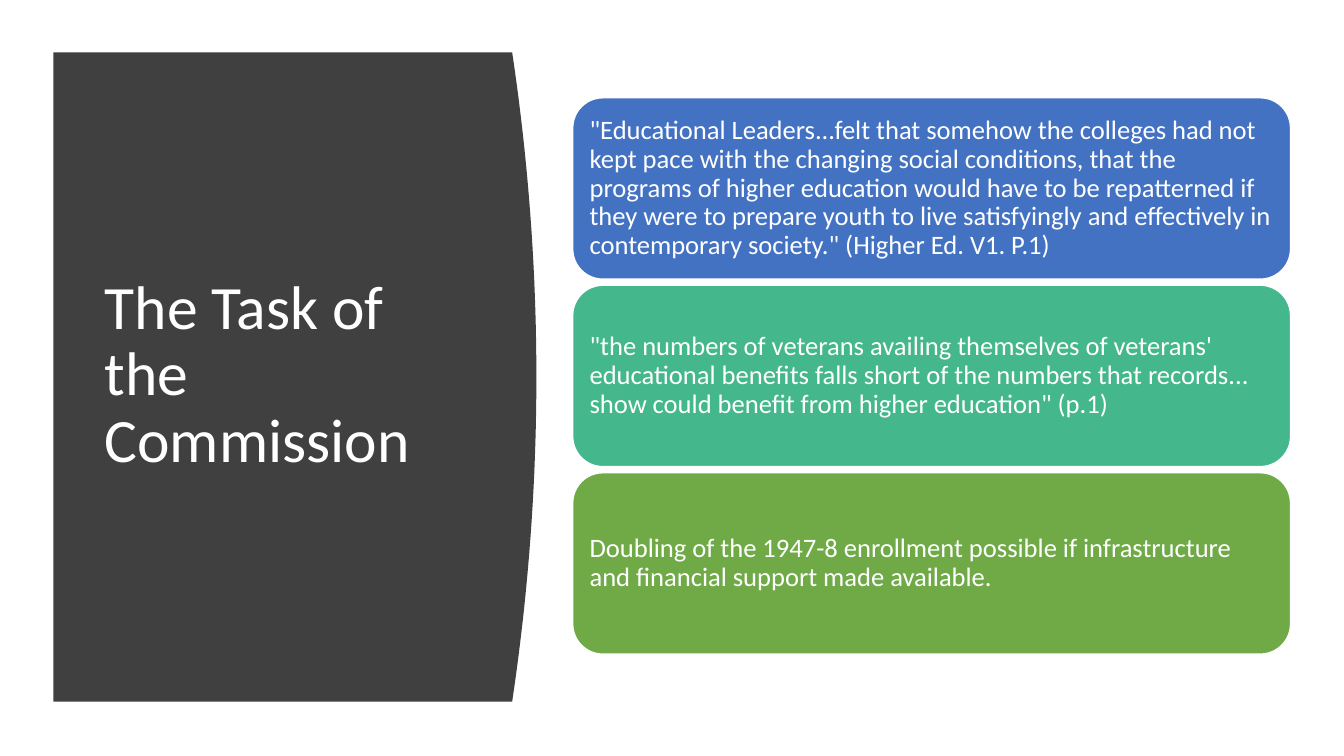
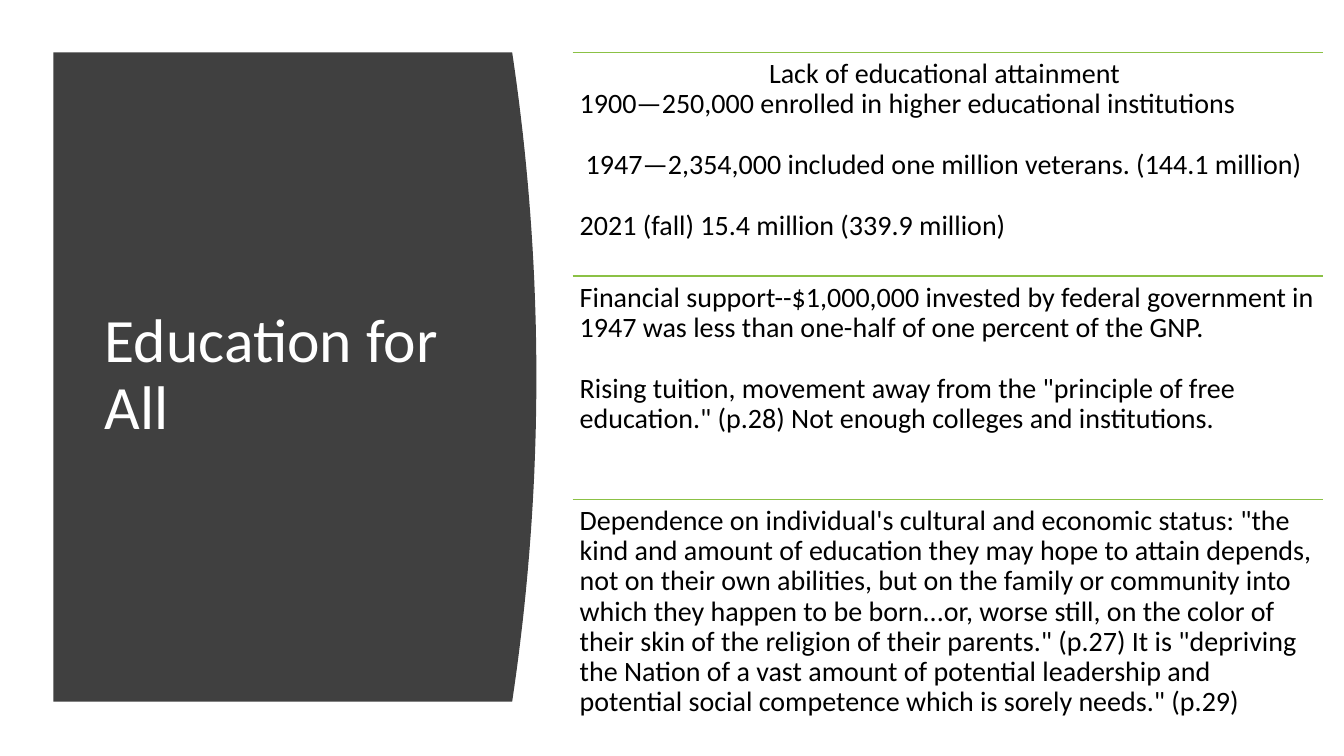
from lxml.etree import SubElement
from pptx import Presentation
from pptx.dml.color import RGBColor
from pptx.enum.shapes import MSO_CONNECTOR, MSO_SHAPE
from pptx.enum.text import MSO_ANCHOR, PP_ALIGN
from pptx.oxml.ns import qn
from pptx.util import Emu, Pt

EMU_PER_PX = 9144  # 100 px to the inch
SLIDE_WIDTH, SLIDE_HEIGHT = 1333, 750
FONT = "Calibri"
WHITE, BLACK, DARK, GREEN = "FFFFFF", "000000", "404040", "8BC145"

PANEL = {"left": 53, "top": 52, "width": 455, "height": 644, "bulge": 24}
PANEL_STEPS = 40
TITLE_BOX = (94, 111, 374, 524)
CONTENT_LEFT = 568

TASK_TITLE = "The Task of the Commission"
TASK_CARDS = [
    ("4372C3", '"Educational Leaders...felt that somehow the colleges had not kept pace with the '
     'changing social conditions, that the programs of higher education would have to be '
     'repatterned if they were to prepare youth to live satisfyingly and effectively in '
     'contemporary society." (Higher Ed. V1. P.1)'),
    ("44B78C", '"the numbers of veterans availing themselves of veterans\' educational benefits '
     'falls short of the numbers that records... show could benefit from higher education" (p.1)'),
    ("6FAA47", "Doubling of the 1947-8 enrollment possible if infrastructure and financial "
     "support made available."),
]
CARDS_TOP, CARD_WIDTH, CARD_HEIGHT, CARD_GAP = 97, 712, 180, 6

EDUCATION_TITLE = "Education for All"
# Each section is a list of (text, paragraph format).
LINE_GAP = 22
EDUCATION_SECTIONS = [
    [
        ("Lack of educational attainment ", {"align": PP_ALIGN.CENTER}),
        ("1900—250,000 enrolled in higher educational institutions", {}),
        ("1947—2,354,000 included one million veterans. (144.1 million)",
         {"space_before": LINE_GAP, "indent": 6}),
        ("2021 (fall) 15.4 million (339.9 million)", {"space_before": LINE_GAP}),
    ],
    [
        ("Financial support--$1,000,000 invested by federal government in 1947 was less than "
         "one-half of one percent of the GNP.", {}),
        ('Rising tuition, movement away from the "principle of free education." (p.28) '
         "Not enough colleges and institutions.", {"space_before": LINE_GAP}),
    ],
    [
        ("Dependence on individual's cultural and economic status: \"the kind and amount of "
         "education they may hope to attain depends, not on their own abilities, but on the "
         "family or community into which they happen to be born...or, worse still, on the color "
         'of their skin of the religion of their parents." (p.27) It is "depriving the Nation of '
         "a vast amount of potential leadership and potential social competence which is sorely "
         'needs." (p.29)', {}),
    ],
]
SECTIONS_TOP, SECTIONS_WIDTH, SECTIONS_HEIGHT = 52, 744, 665


def px(value):
    return Emu(round(value * EMU_PER_PX))


def rgb(hex_color):
    return RGBColor.from_string(hex_color)


def paint(shape, fill, line=None):
    shape.shadow.inherit = False
    shape.fill.solid()
    shape.fill.fore_color.rgb = rgb(fill)
    if line:
        shape.line.color.rgb = rgb(line)
        shape.line.width = Pt(1)
    else:
        shape.line.fill.background()


def set_frame(shape, anchor, inset_x, inset_y):
    frame = shape.text_frame
    frame.word_wrap = True
    frame.vertical_anchor = anchor
    frame.margin_left = frame.margin_right = px(inset_x)
    frame.margin_top = frame.margin_bottom = px(inset_y)
    return frame


def write(paragraph, text, size, color, align=PP_ALIGN.LEFT, space_before=0, indent=0):
    paragraph.alignment = align
    paragraph.line_spacing = 0.9
    paragraph.space_before = Pt(space_before)
    if indent:
        paragraph._p.get_or_add_pPr().set("indent", str(px(indent)))
    run = paragraph.add_run()
    run.text = text
    run.font.name = FONT
    run.font.size = Pt(size)
    run.font.color.rgb = rgb(color)


def add_panel(slide):
    """Draw the dark panel whose right side bulges as a parabola."""
    left, top = PANEL["left"], PANEL["top"]
    right, bottom = left + PANEL["width"], top + PANEL["height"]
    edge = []
    for step in range(PANEL_STEPS + 1):
        part = step / PANEL_STEPS
        bulge = PANEL["bulge"] * (1 - (2 * part - 1) ** 2)
        edge.append((px(right + bulge), px(top + PANEL["height"] * part)))
    builder = slide.shapes.build_freeform(px(left), px(top))
    builder.add_line_segments(edge + [(px(left), px(bottom))], close=True)
    paint(builder.convert_to_shape(), DARK)


def add_titled_slide(presentation, title):
    slide = presentation.slides.add_slide(presentation.slide_layouts[6])
    add_panel(slide)
    box = slide.shapes.add_textbox(*map(px, TITLE_BOX))
    frame = set_frame(box, MSO_ANCHOR.MIDDLE, 10, 5)
    write(frame.paragraphs[0], title, 44, WHITE)
    return slide


def add_cards(slide):
    for index, (color, text) in enumerate(TASK_CARDS):
        top = CARDS_TOP + index * (CARD_HEIGHT + CARD_GAP)
        card = slide.shapes.add_shape(MSO_SHAPE.ROUNDED_RECTANGLE, px(CONTENT_LEFT), px(top),
                                      px(CARD_WIDTH), px(CARD_HEIGHT))
        paint(card, color, WHITE)
        frame = set_frame(card, MSO_ANCHOR.MIDDLE, 8, 8)
        write(frame.paragraphs[0], text, 19, WHITE)


def add_rule(slide, top):
    rule = slide.shapes.add_connector(MSO_CONNECTOR.STRAIGHT, px(CONTENT_LEFT), px(top),
                                      px(CONTENT_LEFT + SECTIONS_WIDTH), px(top))
    rule.line.color.rgb = rgb(GREEN)
    rule.line.width = Pt(1)
    SubElement(rule._element.spPr, qn("a:effectLst"))


def add_sections(slide):
    height = SECTIONS_HEIGHT / len(EDUCATION_SECTIONS)
    for index, section in enumerate(EDUCATION_SECTIONS):
        top = SECTIONS_TOP + index * height
        add_rule(slide, top)
        box = slide.shapes.add_textbox(px(CONTENT_LEFT), px(top), px(SECTIONS_WIDTH), px(height))
        frame = set_frame(box, MSO_ANCHOR.TOP, 7, 7)
        for number, (text, options) in enumerate(section):
            paragraph = frame.add_paragraph() if number else frame.paragraphs[0]
            write(paragraph, text, 20, BLACK, **options)


def main():
    presentation = Presentation()
    presentation.slide_width = px(SLIDE_WIDTH)
    presentation.slide_height = px(SLIDE_HEIGHT)
    add_cards(add_titled_slide(presentation, TASK_TITLE))
    add_sections(add_titled_slide(presentation, EDUCATION_TITLE))
    presentation.save("out.pptx")


if __name__ == "__main__":
    main()
